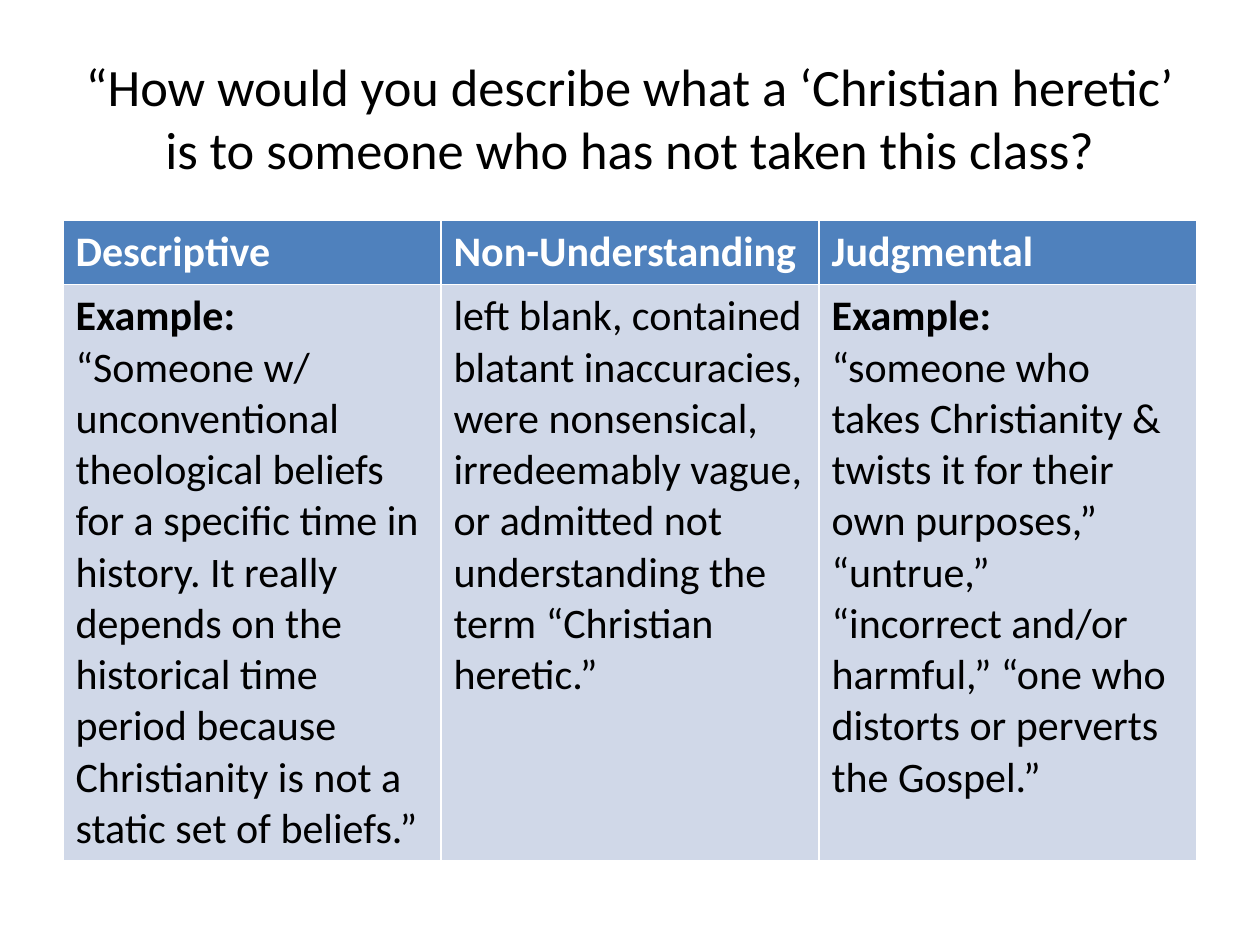
"""Build a slide that sorts student answers on heresy into three categories."""
from pptx import Presentation
from pptx.dml.color import RGBColor
from pptx.enum.text import MSO_ANCHOR, PP_ALIGN
from pptx.util import Cm, Pt

COLORS = {"text": "000000", "header": "4F81BD", "header_text": "FFFFFF", "body": "D0D8E8"}
FONT = "Calibri"
TITLE = ("“How would you describe what a ‘Christian heretic’ "
         "is to someone who has not taken this class?")
CATEGORIES = {
    "Descriptive": [
        "Example:",
        "“Someone w/ unconventional theological beliefs for a specific time in history. "
        "It really depends on the historical time period because Christianity is not "
        "a static set of beliefs.”",
    ],
    "Non-Understanding": [
        "left blank, contained blatant inaccuracies, were nonsensical, irredeemably vague, "
        "or admitted not understanding the term “Christian heretic.”",
    ],
    "Judgmental": [
        "Example:",
        "“someone who takes Christianity & twists it for their own purposes,” “untrue,”",
        "“incorrect and/or harmful,” “one who distorts or perverts the Gospel.”",
    ],
}


class SlideBuilder:
    def __init__(self, prs):
        self.s = prs.slides.add_slide(prs.slide_layouts[5])

    def style(self, p, size, color, bold=False):
        p.font.name = FONT
        p.font.size = Pt(size)
        p.font.bold = bold
        p.font.color.rgb = RGBColor.from_string(COLORS[color])

    def title(self, text, left, top, width, height):
        sp = self.s.shapes.title
        sp.left, sp.top, sp.width, sp.height = Cm(left), Cm(top), Cm(width), Cm(height)
        tf = sp.text_frame
        tf.text = text
        tf.word_wrap = True
        tf.vertical_anchor = MSO_ANCHOR.MIDDLE
        p = tf.paragraphs[0]
        p.alignment = PP_ALIGN.CENTER
        self.style(p, 30, "text")

    def cell(self, cell, lines, fill, color, bold_lines):
        cell.fill.solid()
        cell.fill.fore_color.rgb = RGBColor.from_string(COLORS[fill])
        tf = cell.text_frame
        tf.text = "\n".join(lines)
        for p in tf.paragraphs:
            self.style(p, 24, color, p.text in bold_lines)

    def table(self, columns, left, top, width, row_heights):
        frame = self.s.shapes.add_table(2, len(columns), Cm(left), Cm(top),
                                        Cm(width), Cm(sum(row_heights)))
        table = frame.table
        for row, height in zip(table.rows, row_heights):
            row.height = Cm(height)
        for i, (heading, lines) in enumerate(columns.items()):
            self.cell(table.cell(0, i), [heading], "header", "header_text", [heading])
            self.cell(table.cell(1, i), lines, "body", "text", ["Example:"])


def main():
    prs = Presentation()
    prs.slide_width, prs.slide_height = Cm(25.4), Cm(19.05)
    builder = SlideBuilder(prs)
    builder.title(TITLE, 1.27, 0.76, 22.86, 3.18)
    builder.table(CATEGORIES, 1.27, 4.45, 22.86, [1.27, 11.6])
    prs.save("out.pptx")


if __name__ == "__main__":
    main()
